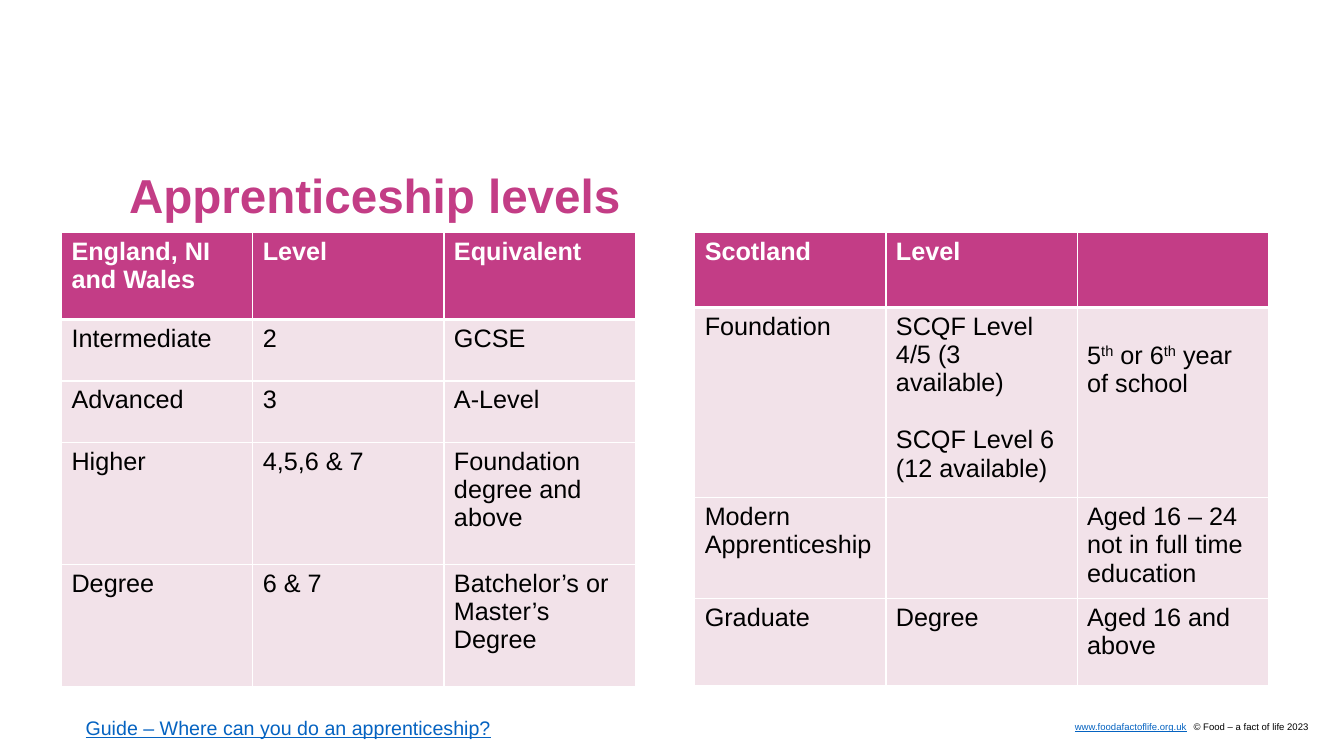
import pptx
import pptx.dml.color
import pptx.enum.text
import pptx.oxml
import pptx.oxml.ns
import pptx.util
from pptx.util import Inches

PINK, PALE, WHITE, BLACK, LINK = "C33D86", "F2E2E9", "FFFFFF", "000000", "0563C1"
LINE_GAP = 20.7

ENGLAND = [
    ["England, NI and Wales", "Level", "Equivalent"],
    ["Intermediate", "2", "GCSE"],
    ["Advanced", "3", "A-Level"],
    ["Higher", "4,5,6 & 7", "Foundation degree and above"],
    ["Degree", "6 & 7", "Batchelor’s or Master’s Degree"],
]
SCOTLAND = [
    ["Scotland", "Level", ""],
    ["Foundation", "SCQF Level 4/5 (3 available)", ""],
    ["Modern Apprenticeship", "", "Aged 16 – 24 not in full time education"],
    ["Graduate", "Degree", "Aged 16 and above"],
]


def rgb(value):
    return pptx.dml.color.RGBColor.from_string(value)


def add_run(p, text, size, color, bold=False, underline=False, raised=False):
    r = p.add_run()
    r.text = text
    r.font.name = "Arial"
    r.font.size = pptx.util.Pt(size)
    r.font.color.rgb = rgb(color)
    r.font.bold = bold
    r.font.underline = underline
    if raised:
        r.font._element.set("baseline", "30000")


def set_margins(tf, margin):
    tf.margin_left = tf.margin_right = Inches(margin)
    tf.margin_top = tf.margin_bottom = Inches(margin)


def add_title(s, text):
    sp = s.shapes.title
    sp.left, sp.top = Inches(1.28), Inches(1.71)
    sp.width, sp.height = Inches(10.63), Inches(0.79)
    tf = sp.text_frame
    set_margins(tf, 0)
    tf.auto_size = pptx.enum.text.MSO_AUTO_SIZE.NONE
    tf.vertical_anchor = pptx.enum.text.MSO_ANCHOR.TOP
    p = tf.paragraphs[0]
    p.alignment = pptx.enum.text.PP_ALIGN.LEFT
    p.line_spacing = 0.9
    add_run(p, text, 34, PINK, bold=True)


def add_text_box(s, left, top, width, height):
    tf = s.shapes.add_textbox(
        Inches(left), Inches(top), Inches(width), Inches(height)).text_frame
    tf.word_wrap = True
    return tf


def add_right_tabs(p, positions):
    stops = "".join(f'<a:tab pos="{Inches(x)}" algn="r"/>' for x in positions)
    p._p.get_or_add_pPr().append(pptx.oxml.parse_xml(
        f'<a:tabLst {pptx.oxml.ns.nsdecls("a")}>{stops}</a:tabLst>'))


def set_borders(cell, **widths):
    for side in "LRTB":
        width = pptx.util.Pt(widths.get(side, 1))
        cell._tc.get_or_add_tcPr().append(pptx.oxml.parse_xml(
            f'<a:ln{side} {pptx.oxml.ns.nsdecls("a")} w="{width}"><a:solidFill>'
            f'<a:srgbClr val="{WHITE}"/></a:solidFill></a:ln{side}>'))


def format_cell(cell, text, row):
    if row == 0:
        set_borders(cell, B=3)
    elif row == 1:
        set_borders(cell, T=3)
    else:
        set_borders(cell)
    cell.fill.solid()
    cell.fill.fore_color.rgb = rgb(PALE if row else PINK)
    if text:
        add_run(cell.text_frame.paragraphs[0], text, 18,
                BLACK if row else WHITE, bold=row == 0)


def add_level_table(s, left, rows, heights):
    table = s.shapes.add_table(
        len(rows), 3, Inches(left), Inches(2.31), Inches(5.69),
        Inches(sum(heights))).table
    for column in table.columns:
        column.width = Inches(5.69 / 3)
    for i, (texts, height) in enumerate(zip(rows, heights)):
        table.rows[i].height = Inches(height)
        for j, text in enumerate(texts):
            format_cell(table.cell(i, j), text, i)
    return table


def add_foundation_details(table):
    tf = table.cell(1, 1).text_frame
    for text, gap in [("SCQF Level 6", LINE_GAP), ("(12 available)", 0)]:
        p = tf.add_paragraph()
        p.space_before = pptx.util.Pt(gap)
        add_run(p, text, 18, BLACK)
    cell = table.cell(1, 2)
    cell.margin_top = Inches(0.05) + pptx.util.Pt(LINE_GAP)
    p = cell.text_frame.paragraphs[0]
    for text in ["5", "th", " or 6", "th", " year of school"]:
        add_run(p, text, 18, BLACK, raised=text == "th")


def add_footer(s):
    tf = add_text_box(s, 1.26, 7.15, 11.73, 0.11)
    set_margins(tf, 0)
    p = tf.paragraphs[0]
    add_right_tabs(p, [10.51, 11.72])
    add_run(p, "\t", 6.8, BLACK)
    add_run(p, "www.foodafactoflife.org.uk", 6.8, LINK, underline=True)
    add_run(p, "\t© Food – a fact of life 2023", 6.8, BLACK)


def main():
    prs = pptx.Presentation()
    prs.slide_width, prs.slide_height = Inches(13.33), Inches(7.5)
    s = prs.slides.add_slide(prs.slide_layouts[5])
    add_footer(s)
    add_title(s, "Apprenticeship levels")
    add_level_table(s, 0.61, ENGLAND, [0.86, 0.61, 0.61, 1.21, 1.21])
    scotland = add_level_table(s, 6.89, SCOTLAND, [0.74, 1.59, 0.86, 0.86])
    add_foundation_details(scotland)
    tf = add_text_box(s, 0.75, 7.05, 8.41, 0.34)
    add_run(tf.paragraphs[0], "Guide – Where can you do an apprenticeship?",
            14, LINK, underline=True)
    prs.save("out.pptx")


if __name__ == "__main__":
    main()
